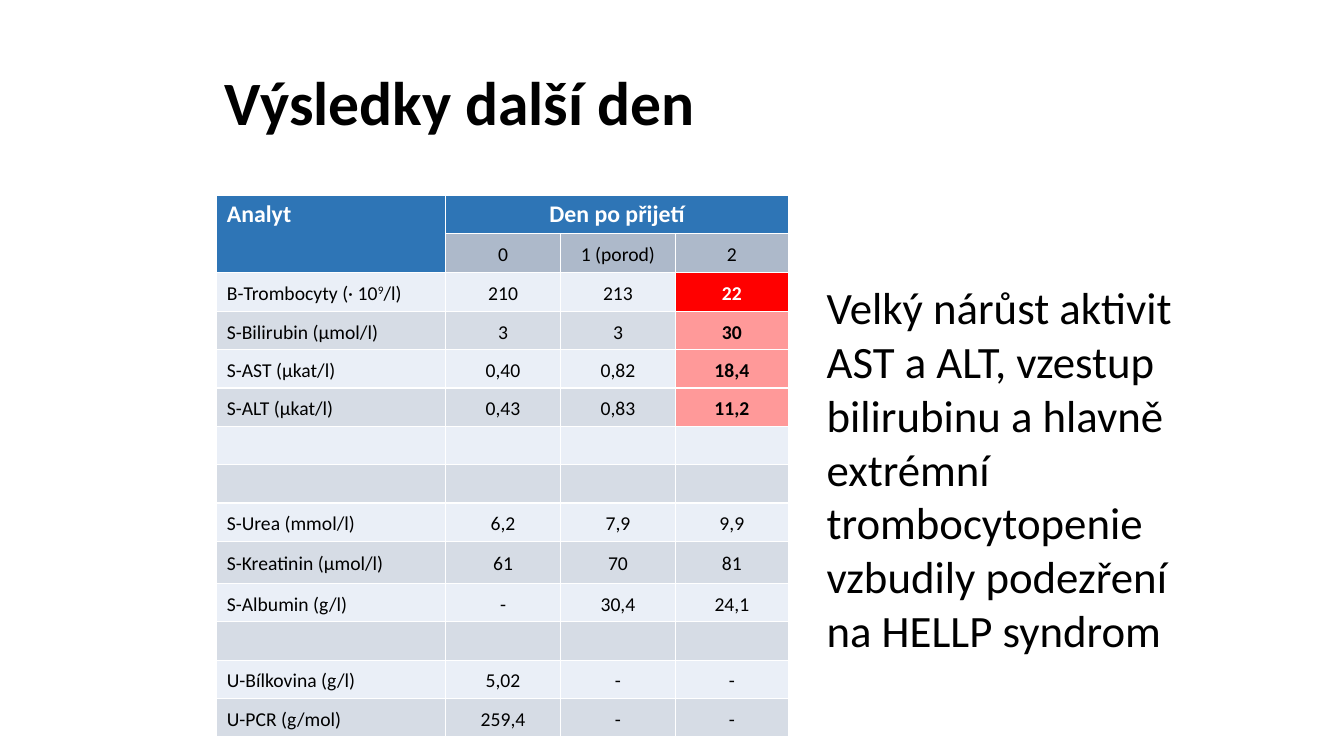
from lxml.etree import SubElement
from pptx import Presentation
from pptx.dml.color import RGBColor
from pptx.enum.text import MSO_ANCHOR, MSO_AUTO_SIZE, PP_ALIGN
from pptx.oxml.ns import qn
from pptx.util import Inches, Pt


def style(par, size, color, bold=False):
    par.font.name = "Calibri"
    par.font.size = Pt(size)
    par.font.bold = bold
    par.font.color.rgb = RGBColor.from_string(color)


def paint(cell, color):
    """Give the cell white borders and a solid fill."""
    props = cell._tc.get_or_add_tcPr()
    for side in ("lnL", "lnR", "lnT", "lnB"):
        line = SubElement(props, qn(f"a:{side}"), w=str(Pt(1)))
        solid = SubElement(line, qn("a:solidFill"))
        SubElement(solid, qn("a:srgbClr"), val="FFFFFF")
    cell.fill.solid()
    cell.fill.fore_color.rgb = RGBColor.from_string(color)


HEAD, DAYS = "2E75B6", "ADB9CA"
BANDS = ("EAEFF7", "D6DCE5")
ALERTS = {2: "FF0000", 3: "FF9999", 4: "FF9999", 5: "FF9999"}
WIDTHS = (2.27, 1.14, 1.14, 1.12)
EMPTY = ("", "", "", "")
ROWS = [
    ("Analyt", "Den po přijetí", "", ""),
    ("", "0", "1 (porod)", "2"),
    ("B-Trombocyty (· 10^9^/l)", "210", "213", "22"),
    ("S-Bilirubin (µmol/l)", "3", "3", "30"),
    ("S-AST (µkat/l)", "0,40", "0,82", "18,4"),
    ("S-ALT (µkat/l)", "0,43", "0,83", "11,2"),
    EMPTY,
    EMPTY,
    ("S-Urea (mmol/l)", "6,2", "7,9", "9,9"),
    ("S-Kreatinin (µmol/l)", "61", "70", "81"),
    ("S-Albumin (g/l)", "-", "30,4", "24,1"),
    EMPTY,
    ("U-Bílkovina (g/l)", "5,02", "-", "-"),
    ("U-PCR (g/mol)", "259,4", "-", "-"),
]
HEIGHTS = {2: 0.39, 9: 0.42}

prs = Presentation()
prs.slide_width, prs.slide_height = Inches(13.33), Inches(7.5)
slide = prs.slides.add_slide(prs.slide_layouts[6])

title = slide.shapes.add_textbox(Inches(2.13), Inches(0.48), Inches(9.03), Inches(1.14))
frame = title.text_frame
frame.word_wrap = True
frame.vertical_anchor = MSO_ANCHOR.MIDDLE
par = frame.paragraphs[0]
par.text = "Výsledky další den"
par.line_spacing = 0.9
style(par, 44, "000000", True)

table = slide.shapes.add_table(
    len(ROWS), len(WIDTHS), Inches(2.15), Inches(1.94), Inches(5.67), Inches(5.35)
).table
table.first_row = table.horz_banding = False
for col, width in zip(table.columns, WIDTHS):
    col.width = Inches(width)

for r, row in enumerate(ROWS):
    table.rows[r].height = Inches(HEIGHTS.get(r, 0.38))
    for c, text in enumerate(row):
        cell = table.cell(r, c)
        alert = c == 3 and r in ALERTS
        if r == 0 or (r == 1 and c == 0):
            fill = HEAD
        elif r == 1:
            fill = DAYS
        else:
            fill = ALERTS[r] if alert else BANDS[r % 2]
        paint(cell, fill)
        cell.margin_left = Inches(0 if c else 0.1)
        cell.margin_right = cell.margin_top = cell.margin_bottom = 0
        cell.vertical_anchor = MSO_ANCHOR.MIDDLE if r else MSO_ANCHOR.TOP
        if not text:
            continue
        par = cell.text_frame.paragraphs[0]
        for i, part in enumerate(text.split("^")):
            run = par.add_run()
            run.text = part
            if i == 1:
                run._r.get_or_add_rPr().set("baseline", "30000")
        par.alignment = PP_ALIGN.CENTER if c else PP_ALIGN.LEFT
        par.line_spacing = 1.15
        par.space_before = Pt(1 if r and c else 2)
        par.space_after = Pt(2)
        white = r == 0 or fill == "FF0000"
        style(par, 14 if r else 17, "FFFFFF" if white else "000000", r == 0 or alert)

table.cell(0, 0).merge(table.cell(1, 0))
table.cell(0, 1).merge(table.cell(0, 3))

note = slide.shapes.add_textbox(Inches(8.1), Inches(2.73), Inches(4.25), Inches(3.87))
frame = note.text_frame
frame.word_wrap = True
frame.auto_size = MSO_AUTO_SIZE.SHAPE_TO_FIT_TEXT
par = frame.paragraphs[0]
par.text = (
    "Velký nárůst aktivit AST a ALT, vzestup bilirubinu a hlavně extrémní "
    "trombocytopenie vzbudily podezření\vna HELLP syndrom"
)
style(par, 32, "000000")

prs.save("out.pptx")
